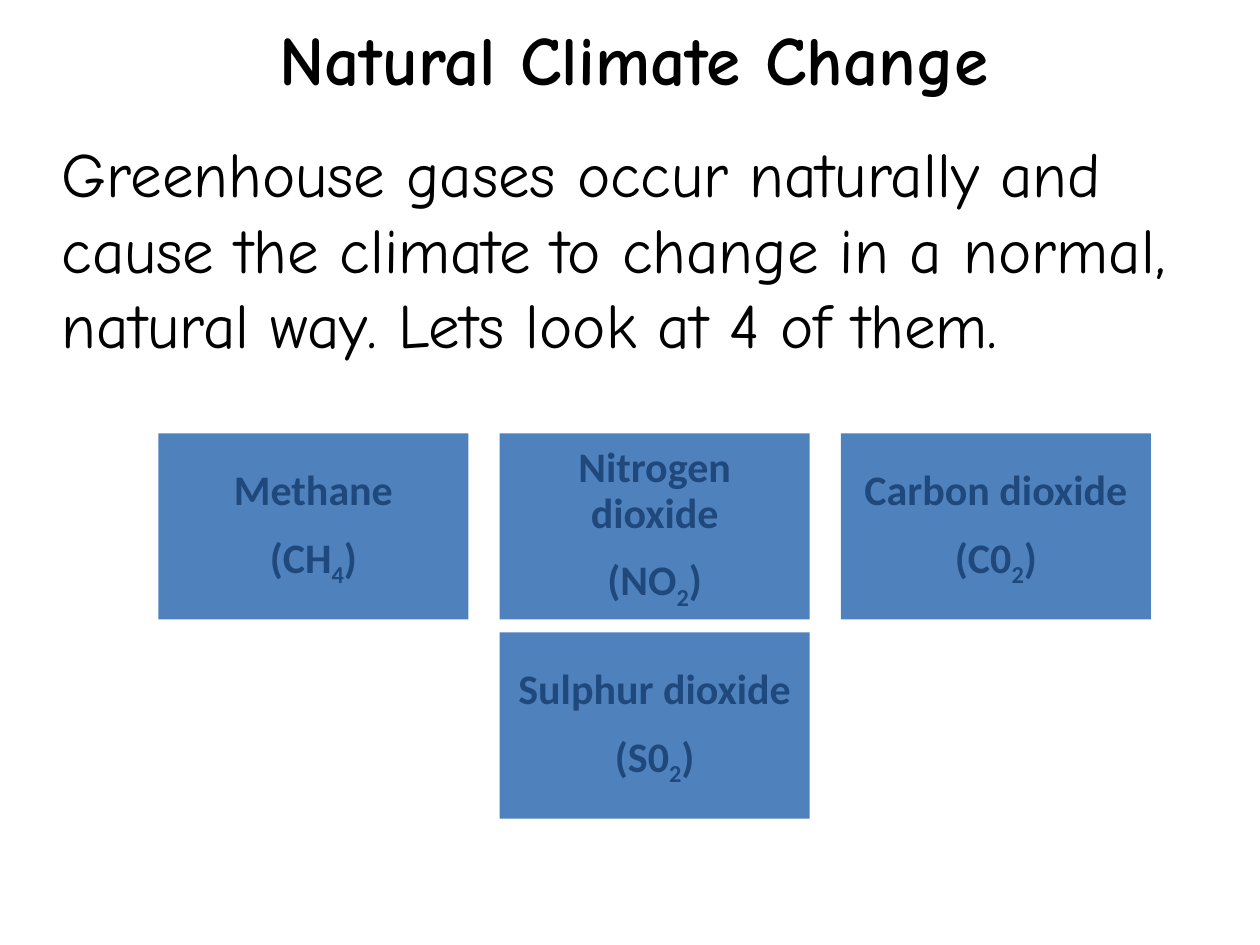
from dataclasses import dataclass

import pptx
import pptx.dml.color
import pptx.enum.shapes
import pptx.enum.text
import pptx.util

Pt = pptx.util.Pt
Align = pptx.enum.text.PP_ALIGN
Anchor = pptx.enum.text.MSO_ANCHOR


@dataclass(frozen=True)
class Theme:
    ink: str = "000000"
    card_fill: str = "4F81BD"
    card_ink: str = "1F497D"
    heading_font: str = "Comic Neue"
    card_font: str = "Calibri"
    title_size: float = 39.6
    body_size: float = 36
    card_size: float = 24


THEME = Theme()

GASES = [
    ("Methane", "CH", "4"),
    ("Nitrogen dioxide", "NO", "2"),
    ("Carbon dioxide", "C0", "2"),
    ("Sulphur dioxide", "S0", "2"),
]
CARD_PLACES = [(0, 0), (1, 0), (2, 0), (1, 1)]
CARD_LEFT, CARD_TOP = 90.5, 247.6
CARD_WIDTH, CARD_HEIGHT = 177.2, 106.4
COLUMN_STEP, ROW_STEP = 195, 113.8


def color(code):
    return pptx.dml.color.RGBColor.from_string(code)


def add_span(para, text, font, size, ink, bold=False):
    span = para.add_run()
    span.text = text
    span.font.name = font
    span.font.size = Pt(size)
    span.font.bold = bold
    span.font.color.rgb = color(ink)
    return span


def fill_placeholder(box, place, text, size, align, anchor, bold=False):
    box.left, box.top, box.width, box.height = map(Pt, place)
    frame = box.text_frame
    frame.word_wrap = True
    frame.auto_size = pptx.enum.text.MSO_AUTO_SIZE.NONE
    frame.vertical_anchor = anchor
    para = frame.paragraphs[0]
    para.alignment = align
    para.space_before = Pt(0)
    add_span(para, text, THEME.heading_font, size, THEME.ink, bold)
    return frame


def format_card_line(para):
    para.alignment = Align.CENTER
    para.line_spacing = 0.9
    para.space_after = Pt(10)


def add_gas_card(page, gas, column, row):
    name, symbol, count = gas
    box = page.shapes.add_shape(
        pptx.enum.shapes.MSO_SHAPE.RECTANGLE,
        Pt(CARD_LEFT + column * COLUMN_STEP),
        Pt(CARD_TOP + row * ROW_STEP),
        Pt(CARD_WIDTH),
        Pt(CARD_HEIGHT),
    )
    box.shadow.inherit = False
    box.fill.solid()
    box.fill.fore_color.rgb = color(THEME.card_fill)
    box.line.fill.background()

    frame = box.text_frame
    frame.word_wrap = True
    frame.vertical_anchor = Anchor.MIDDLE
    frame.margin_left = frame.margin_right = Pt(7.2)
    frame.margin_top = frame.margin_bottom = Pt(7.2)

    style = (THEME.card_font, THEME.card_size, THEME.card_ink, True)
    name_line = frame.paragraphs[0]
    formula_line = frame.add_paragraph()
    for para in (name_line, formula_line):
        format_card_line(para)
    add_span(name_line, name, *style)
    add_span(formula_line, "(" + symbol, *style)
    subscript = add_span(formula_line, count, *style)
    subscript.font._element.set("baseline", "-25000")
    add_span(formula_line, ")", *style)


def main():
    deck = pptx.Presentation()
    deck.slide_width, deck.slide_height = Pt(720), Pt(540)
    page = deck.slides.add_slide(deck.slide_layouts[0])
    title, body = page.placeholders

    title_frame = fill_placeholder(
        title, (56.2, 16.6, 612, 78.5), "Natural Climate Change",
        THEME.title_size, Align.CENTER, Anchor.MIDDLE, bold=True,
    )
    title_frame.margin_top, title_frame.margin_bottom = Pt(0), Pt(46)
    fill_placeholder(
        body, (28.1, 73.4, 691.9, 138.2),
        "Greenhouse gases occur naturally and cause the climate to change "
        "in a normal, natural way. Lets look at 4 of them.",
        THEME.body_size, Align.LEFT, Anchor.TOP,
    )
    for gas, (column, row) in zip(GASES, CARD_PLACES):
        add_gas_card(page, gas, column, row)
    deck.save("out.pptx")


if __name__ == "__main__":
    main()
